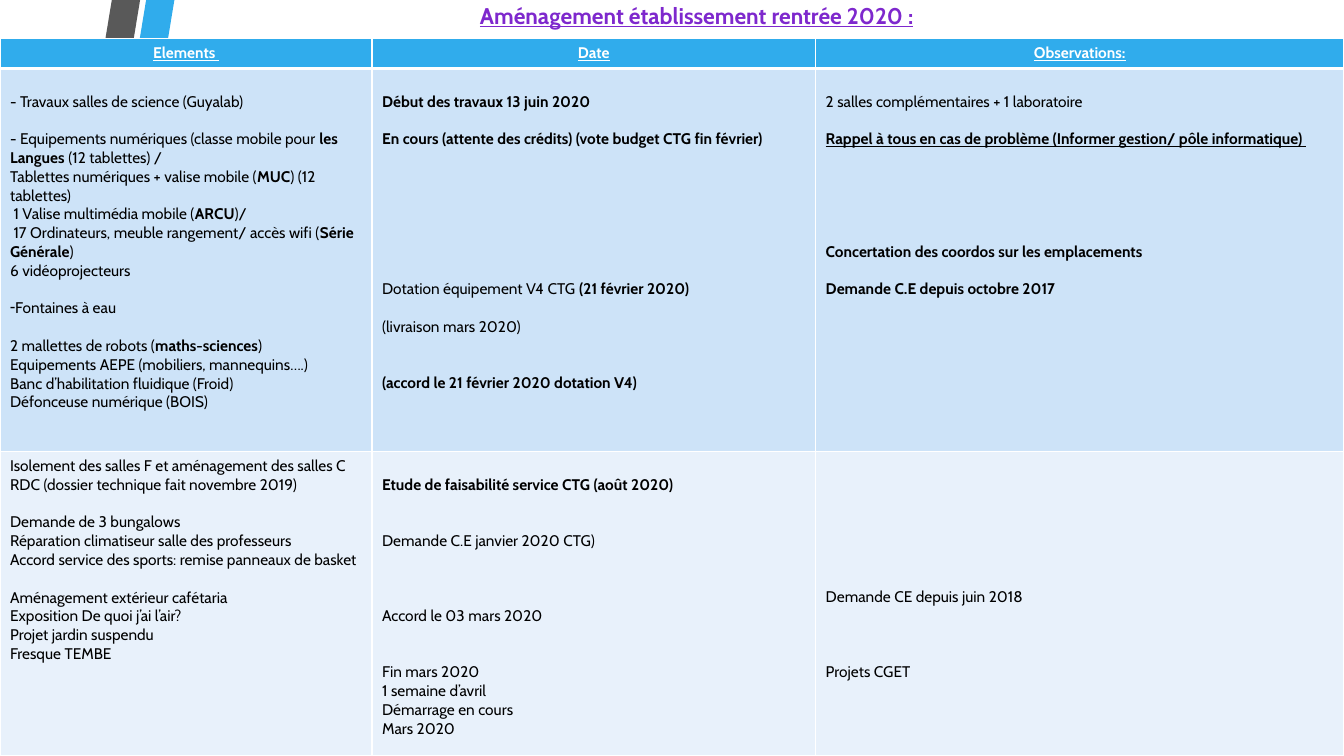
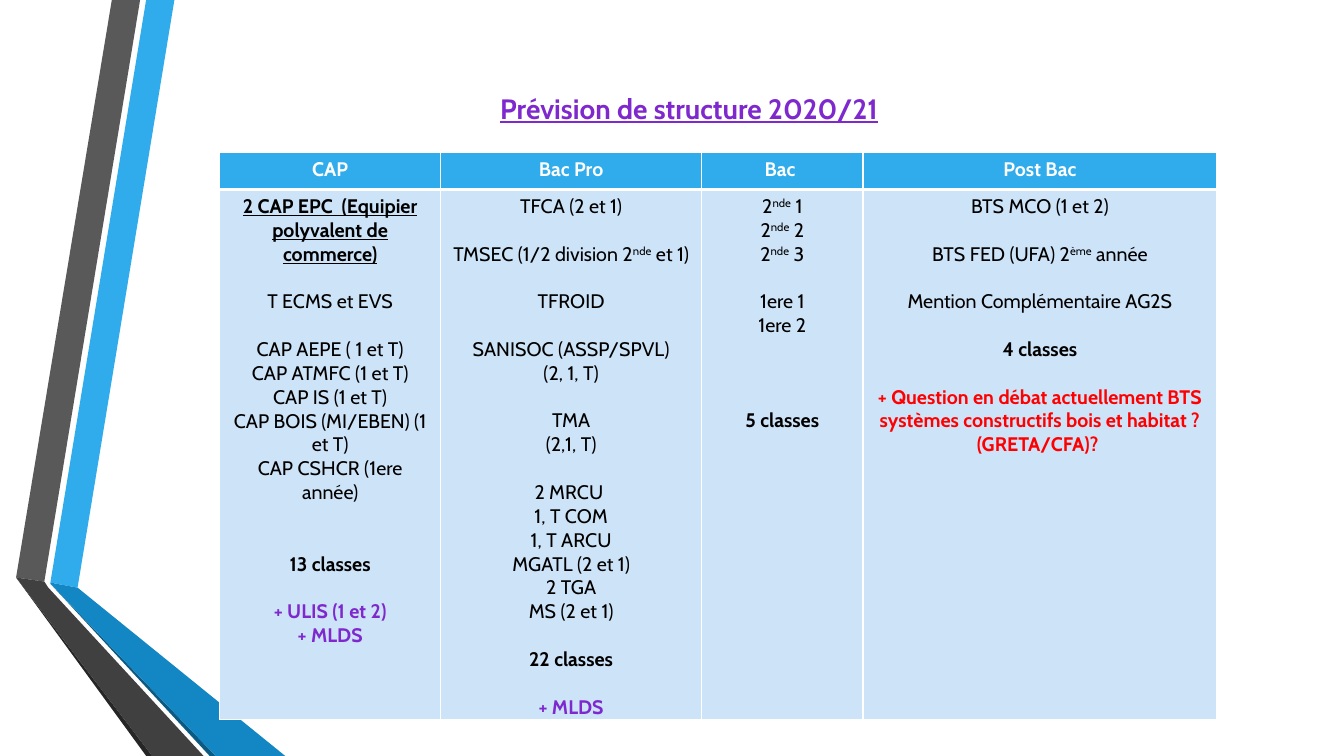
from dataclasses import dataclass

import lxml.etree
import pptx
import pptx.dml.color
import pptx.enum.text
import pptx.oxml.ns
import pptx.util

Inches = pptx.util.Inches
Pt = pptx.util.Pt
Align = pptx.enum.text.PP_ALIGN
Anchor = pptx.enum.text.MSO_ANCHOR


@dataclass(frozen=True)
class Theme:
    font: str = "Cabin"
    white: str = "FFFFFF"
    black: str = "000000"
    red: str = "FF0000"
    purple: str = "7E28CD"
    blue: str = "30ACEC"
    blue_fold: str = "1287C3"
    blue_shade: str = "0C5A82"
    grey: str = "595959"
    grey_fold: str = "404040"
    grey_shade: str = "262626"
    body_rows: tuple[str, ...] = ("CDE3F8", "E8F1FB")
    works_title_size: float = 16.2
    works_size: float = 11
    structure_title_size: float = 20
    structure_size: float = 14
    line_height: float = 1.215
    thin_border: float = 1
    thick_border: float = 3


THEME = Theme()


@dataclass(frozen=True)
class Line:
    """A paragraph: *bold* and ^superscript^ are marked; gap counts the free lines above."""
    text: str
    gap: int = 0
    color: str = THEME.black
    underline: bool = False
    bullet: str = ""


@dataclass(frozen=True)
class Band:
    color: str
    points: tuple[tuple[float, float], ...]


@dataclass(frozen=True)
class TableDesign:
    left: float
    top: float
    columns: tuple[float, ...]
    rows: tuple[float, ...]
    size: float
    body_align: Align
    header_underline: bool
    headers: tuple[str, ...]
    body: tuple[tuple[tuple[Line, ...], ...], ...]


BANDS = (
    Band(THEME.blue, ((0.5, 5.78), (0.77, 5.83), (1.73, 0), (1.45, 0))),
    Band(THEME.grey, ((1.39, 0), (1.11, 0), (0.16, 5.73), (0.44, 5.77))),
    Band(THEME.grey_shade, ((0.16, 5.73), (1.45, 7.5), (1.51, 7.5))),
    Band(THEME.blue_shade, ((0.5, 5.79), (2.08, 7.5), (2.14, 7.5))),
    Band(THEME.blue_fold, ((0.5, 5.79), (2.14, 7.5), (2.83, 7.5), (0.77, 5.83), (0.5, 5.78))),
    Band(THEME.grey_fold, ((2.02, 7.5), (0.48, 5.83), (0.44, 5.77), (0.16, 5.73), (1.51, 7.5))),
)

WORKS = TableDesign(
    left=0, top=0.38, columns=(3.69, 4.4, 5.24), rows=(0.3, 3.8, 3.02),
    size=THEME.works_size, body_align=Align.LEFT, header_underline=True,
    headers=("Elements ", "Date", "Observations:"),
    body=(
        (
            (
                Line("- Travaux salles de science (Guyalab)", gap=1),
                Line("- Equipements numériques (classe mobile pour *les Langues *(12 tablettes) /", gap=1),
                Line("Tablettes numériques + valise mobile (*MUC*) (12 tablettes)"),
                Line(" 1 Valise multimédia mobile (*ARCU*)/"),
                Line(" 17 Ordinateurs, meuble rangement/ accès wifi (*Série Générale*)"),
                Line("6 vidéoprojecteurs"),
                Line("Fontaines à eau", gap=1, bullet="-"),
                Line("2 mallettes de robots (*maths-sciences*)", gap=1),
                Line("Equipements AEPE (mobiliers, mannequins….)"),
                Line("Banc d’habilitation fluidique (Froid)"),
                Line("Défonceuse numérique (BOIS)"),
            ),
            (
                Line("*Début des travaux 13 juin 2020*", gap=1),
                Line("*En cours (attente des crédits) (vote budget CTG fin février)*", gap=1),
                Line("Dotation équipement V4 CTG *(21 février 2020)*", gap=7),
                Line("(livraison mars 2020)", gap=1),
                Line("*(accord le 21 février 2020 dotation V4)*", gap=2),
            ),
            (
                Line("2 salles complémentaires + 1 laboratoire", gap=1),
                Line("*Rappel à tous en cas de problème (Informer gestion/ pôle informatique) *",
                     gap=1, underline=True),
                Line("*Concertation des coordos sur les emplacements*", gap=5),
                Line("*Demande C.E depuis octobre 2017*", gap=1),
            ),
        ),
        (
            (
                Line("Isolement des salles F et aménagement des salles C RDC "
                     "(dossier technique fait novembre 2019)"),
                Line("Demande de 3 bungalows", gap=1),
                Line("Réparation climatiseur salle des professeurs"),
                Line("Accord service des sports: remise panneaux de basket"),
                Line("Aménagement extérieur cafétaria", gap=1),
                Line("Exposition De quoi j’ai l’air?"),
                Line("Projet jardin suspendu"),
                Line("Fresque TEMBE"),
            ),
            (
                Line("*Etude de faisabilité service CTG (août 2020)*", gap=1),
                Line("Demande C.E janvier 2020 CTG)", gap=2),
                Line("Accord le 03 mars 2020", gap=3),
                Line("Fin mars 2020", gap=2),
                Line("1 semaine d’avril"),
                Line("Démarrage en cours"),
                Line("Mars 2020"),
            ),
            (
                Line("Demande CE depuis juin 2018", gap=7),
                Line("Projets CGET", gap=3),
            ),
        ),
    ),
)

STRUCTURE = TableDesign(
    left=2.18, top=1.51, columns=(2.19, 2.59, 1.6, 3.51), rows=(0.37, 5.22),
    size=THEME.structure_size, body_align=Align.CENTER, header_underline=False,
    headers=("CAP", "Bac Pro", "Bac ", "Post Bac"),
    body=(
        (
            (
                Line("*2 CAP EPC  (Equipier polyvalent de commerce)*", underline=True),
                Line("T ECMS et EVS", gap=1),
                Line("CAP AEPE ( 1 et T)", gap=1),
                Line("CAP ATMFC (1 et T)"),
                Line("CAP IS (1 et T)"),
                Line("CAP BOIS (MI/EBEN) (1 et T)"),
                Line("CAP CSHCR (1ere année)"),
                Line("*13 classes*", gap=2),
                Line("*+ ULIS (1 et 2)*", gap=1, color=THEME.purple),
                Line("*+ MLDS*", color=THEME.purple),
            ),
            (
                Line("TFCA (2 et 1)"),
                Line("TMSEC (1/2 division 2^nde^ et 1)", gap=1),
                Line("TFROID", gap=1),
                Line("SANISOC (ASSP/SPVL)", gap=1),
                Line("(2, 1, T)"),
                Line("TMA", gap=1),
                Line("(2,1, T)"),
                Line("2 MRCU ", gap=1),
                Line("1, T COM"),
                Line("1, T ARCU"),
                Line("MGATL (2 et 1)"),
                Line("2 TGA"),
                Line("MS (2 et 1)"),
                Line("*22 classes*", gap=1),
                Line("*+ MLDS*", gap=1, color=THEME.purple),
            ),
            (
                Line("2^nde^ 1"),
                Line("2^nde^ 2"),
                Line("2^nde^ 3"),
                Line("1ere 1", gap=1),
                Line("1ere 2"),
                Line("*5 classes*", gap=3),
            ),
            (
                Line("BTS MCO (1 et 2)"),
                Line("BTS FED (UFA) 2^ème^ année", gap=1),
                Line("Mention Complémentaire AG2S", gap=1),
                Line("*4 classes*", gap=1),
                Line("*+ Question en débat actuellement BTS systèmes constructifs "
                     "bois et habitat ? (GRETA/CFA)? *", gap=1, color=THEME.red),
            ),
        ),
    ),
)


def rgb(color: str) -> pptx.dml.color.RGBColor:
    return pptx.dml.color.RGBColor.from_string(color)


def write_text(paragraph, text: str, *, size: float, color: str, align: Align,
               underline: bool = False) -> None:
    """Fill a paragraph, reading *bold* and ^superscript^ marks."""
    paragraph.alignment = align
    for bold_index, part in enumerate(text.split("*")):
        for raised_index, piece in enumerate(part.split("^")):
            if not piece:
                continue
            run = paragraph.add_run()
            run.text = piece
            run.font.name = THEME.font
            run.font.size = Pt(size)
            run.font.bold = bold_index % 2 == 1
            run.font.underline = underline
            run.font.color.rgb = rgb(color)
            if raised_index % 2:
                run.font._element.set("baseline", "30000")


def add_bullet(paragraph, character: str) -> None:
    properties = paragraph._p.get_or_add_pPr()
    indent = Inches(0.05)
    properties.set("marL", str(indent))
    properties.set("indent", str(-indent))
    bullet = lxml.etree.SubElement(properties, pptx.oxml.ns.qn("a:buChar"))
    bullet.set("char", character)


def set_borders(cell, *, top: float, bottom: float) -> None:
    widths = {"L": THEME.thin_border, "R": THEME.thin_border, "T": top, "B": bottom}
    properties = cell._tc.get_or_add_tcPr()
    for position, (side, width) in enumerate(widths.items()):
        border = lxml.etree.Element(pptx.oxml.ns.qn(f"a:ln{side}"), w=str(Pt(width)))
        fill = lxml.etree.SubElement(border, pptx.oxml.ns.qn("a:solidFill"))
        lxml.etree.SubElement(fill, pptx.oxml.ns.qn("a:srgbClr"), val=THEME.white)
        properties.insert(position, border)


def fill_cell(cell, lines: tuple[Line, ...], size: float, align: Align) -> None:
    line_points = size * THEME.line_height
    cell.margin_top = Inches(0.05) + Pt(lines[0].gap * line_points)
    for index, line in enumerate(lines):
        paragraph = cell.text_frame.add_paragraph() if index else cell.text_frame.paragraphs[0]
        write_text(paragraph, line.text, size=size, color=line.color, align=align,
                   underline=line.underline)
        if index and line.gap:
            paragraph.space_before = Pt(line.gap * line_points)
        if line.bullet:
            add_bullet(paragraph, line.bullet)


def add_bands(slide) -> None:
    for band in BANDS:
        points = [(Inches(x), Inches(y)) for x, y in band.points]
        builder = slide.shapes.build_freeform(*points[0])
        builder.add_line_segments(points[1:], close=True)
        shape = builder.convert_to_shape()
        shape.shadow.inherit = False
        shape.fill.solid()
        shape.fill.fore_color.rgb = rgb(band.color)
        shape.line.fill.background()


def add_title(slide, text: str, left: float, top: float, width: float, height: float,
              size: float) -> None:
    box = slide.shapes.add_textbox(Inches(left), Inches(top), Inches(width), Inches(height))
    frame = box.text_frame
    frame.word_wrap = True
    frame.vertical_anchor = Anchor.MIDDLE
    frame.margin_top = frame.margin_bottom = 0
    write_text(frame.paragraphs[0], f"*{text}*", size=size, color=THEME.purple,
               align=Align.CENTER, underline=True)


def add_design_table(slide, design: TableDesign) -> None:
    table = slide.shapes.add_table(
        len(design.rows), len(design.columns), Inches(design.left), Inches(design.top),
        Inches(sum(design.columns)), Inches(sum(design.rows))).table
    table.first_row = table.horz_banding = False
    for column, width in zip(table.columns, design.columns):
        column.width = Inches(width)
    for row, height in zip(table.rows, design.rows):
        row.height = Inches(height)

    header = tuple((Line(f"*{text}*", color=THEME.white, underline=design.header_underline),)
                   for text in design.headers)
    for row_index, row_cells in enumerate((header, *design.body)):
        is_header = row_index == 0
        for column_index, lines in enumerate(row_cells):
            cell = table.cell(row_index, column_index)
            cell.fill.solid()
            cell.fill.fore_color.rgb = rgb(THEME.blue if is_header else THEME.body_rows[row_index - 1])
            fill_cell(cell, lines, design.size, Align.CENTER if is_header else design.body_align)
            set_borders(cell, top=THEME.thick_border if row_index == 1 else THEME.thin_border,
                        bottom=THEME.thick_border if is_header else THEME.thin_border)


def main() -> None:
    presentation = pptx.Presentation()
    presentation.slide_width = Inches(13.33)
    presentation.slide_height = Inches(7.5)
    blank_layout = presentation.slide_layouts[6]

    works_slide = presentation.slides.add_slide(blank_layout)
    add_bands(works_slide)
    add_title(works_slide, "Aménagement établissement rentrée 2020 :", 1.68, 0, 10.46, 0.3,
              THEME.works_title_size)
    add_design_table(works_slide, WORKS)

    structure_slide = presentation.slides.add_slide(blank_layout)
    add_bands(structure_slide)
    add_title(structure_slide, "Prévision de structure 2020/21", 1.03, 0.87, 11.61, 0.4,
              THEME.structure_title_size)
    add_design_table(structure_slide, STRUCTURE)

    presentation.save("out.pptx")


if __name__ == "__main__":
    main()
